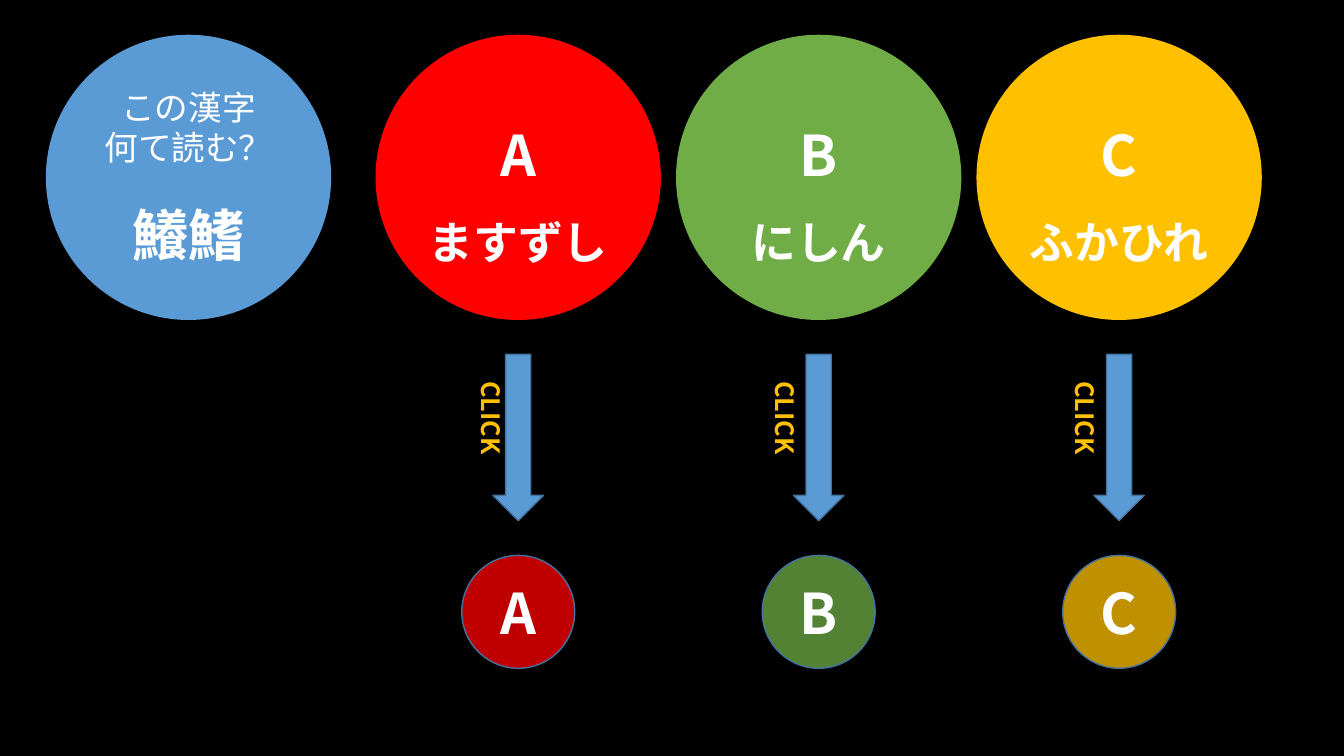
import dataclasses

import pptx
import pptx.dml.color
import pptx.enum.shapes
import pptx.enum.text
import pptx.oxml.ns
import pptx.shapes.autoshape
import pptx.slide
import pptx.text.text
import pptx.util
from lxml import etree

FONT = "Noto Sans CJK JP"
WHITE = "FFFFFF"
BLUE = "5B9BD5"
BLUE_EDGE = "43739E"
AMBER = "FFC000"

SLIDE_WIDTH, SLIDE_HEIGHT = 13.33, 7.5
# Centres of the columns and middles of the rows, in inches
QUESTION_CENTRE = 1.87
FIRST_OPTION_CENTRE = 5.14
OPTION_STEP = 2.98
CHOICE_ROW, CLICK_ROW, ARROW_ROW, ANSWER_ROW = 1.76, 4.22, 4.34, 6.07
CHOICE_SIZE = (2.83, 2.83)
ANSWER_SIZE = (1.12, 1.12)
ARROW_SIZE = (0.5, 1.65)
CLICK_SIZE = (0.5, 1.07)

CIRCLE = pptx.enum.shapes.MSO_SHAPE.FLOWCHART_CONNECTOR
DOWN_ARROW = pptx.enum.shapes.MSO_SHAPE.DOWN_ARROW
CENTRED = pptx.enum.text.PP_ALIGN.CENTER


@dataclasses.dataclass(frozen=True)
class Line:
    text: str
    size: int
    bold: bool = True
    spacing: float = 1.0


@dataclasses.dataclass(frozen=True)
class Option:
    letter: str
    reading: str
    color: str
    answer_color: str
    click_shift: float


QUESTION = [
    Line("この漢字", 24, bold=False),
    Line("何て読む？", 24, bold=False),
    Line("鱶鰭", 40, spacing=1.5),
]
OPTIONS = [
    Option("A", "ますずし", "FF0000", "C00000", -0.31),
    Option("B", "にしん", "70AD47", "548235", -0.38),
    Option("C", "ふかひれ", AMBER, "BF9000", -0.38),
]


def rgb(color: str) -> pptx.dml.color.RGBColor:
    return pptx.dml.color.RGBColor.from_string(color)


def centred_box(
    centre: float, middle: float, size: tuple[float, float]
) -> list[pptx.util.Length]:
    """Return left, top, width and height of a box around a point."""
    width, height = size
    return [
        pptx.util.Inches(length)
        for length in (centre - width / 2, middle - height / 2, width, height)
    ]


def write_lines(
    text_frame: pptx.text.text.TextFrame,
    lines: list[Line],
    color: str,
    alignment: pptx.enum.text.PP_ALIGN,
) -> None:
    text_frame.text = "\n".join(line.text for line in lines)
    for paragraph, line in zip(text_frame.paragraphs, lines):
        paragraph.alignment = alignment
        paragraph.line_spacing = line.spacing
        for run in paragraph.runs:
            run.font.size = pptx.util.Pt(line.size)
            run.font.bold = line.bold
            run.font.color.rgb = rgb(color)
            run.font.name = FONT
            east_asian = etree.SubElement(
                run.font._element, pptx.oxml.ns.qn("a:ea")
            )
            east_asian.set("typeface", FONT)


def add_figure(
    slide: pptx.slide.Slide,
    preset: pptx.enum.shapes.MSO_SHAPE,
    box: list[pptx.util.Length],
    color: str,
    edge: str | None = None,
) -> pptx.shapes.autoshape.Shape:
    shape = slide.shapes.add_shape(preset, *box)
    shape.shadow.inherit = False
    shape.fill.solid()
    shape.fill.fore_color.rgb = rgb(color)
    if edge is None:
        shape.line.fill.background()
    else:
        shape.line.color.rgb = rgb(edge)
        shape.line.width = pptx.util.Pt(1)
    return shape


def add_circle(
    slide: pptx.slide.Slide,
    box: list[pptx.util.Length],
    color: str,
    lines: list[Line],
    edge: str | None = None,
) -> None:
    circle = add_figure(slide, CIRCLE, box, color, edge)
    circle.text_frame.vertical_anchor = pptx.enum.text.MSO_ANCHOR.MIDDLE
    write_lines(circle.text_frame, lines, WHITE, CENTRED)


def add_click_label(
    slide: pptx.slide.Slide, box: list[pptx.util.Length]
) -> None:
    """Add the word that runs downwards beside an arrow."""
    text_frame = slide.shapes.add_textbox(*box).text_frame
    text_frame.word_wrap = True
    text_frame.auto_size = pptx.enum.text.MSO_AUTO_SIZE.SHAPE_TO_FIT_TEXT
    text_frame._txBody.bodyPr.set("vert", "eaVert")
    write_lines(
        text_frame, [Line("CLICK", 18)], AMBER, pptx.enum.text.PP_ALIGN.JUSTIFY
    )


def add_option(
    slide: pptx.slide.Slide, option: Option, centre: float
) -> None:
    choice_lines = [
        Line(option.letter, 40, spacing=1.5),
        Line(option.reading, 32, spacing=1.5),
    ]
    choice_box = centred_box(centre, CHOICE_ROW, CHOICE_SIZE)
    add_circle(slide, choice_box, option.color, choice_lines)

    arrow_box = centred_box(centre, ARROW_ROW, ARROW_SIZE)
    add_figure(slide, DOWN_ARROW, arrow_box, BLUE, BLUE_EDGE)

    answer_box = centred_box(centre, ANSWER_ROW, ANSWER_SIZE)
    answer_lines = [Line(option.letter, 40)]
    add_circle(slide, answer_box, option.answer_color, answer_lines, BLUE_EDGE)

    click_centre = centre + option.click_shift
    add_click_label(slide, centred_box(click_centre, CLICK_ROW, CLICK_SIZE))


def main() -> None:
    presentation = pptx.Presentation()
    presentation.slide_width = pptx.util.Inches(SLIDE_WIDTH)
    presentation.slide_height = pptx.util.Inches(SLIDE_HEIGHT)
    blank_layout = presentation.slide_layouts[6]
    slide = presentation.slides.add_slide(blank_layout)
    slide.background.fill.solid()
    slide.background.fill.fore_color.rgb = rgb("000000")

    question_box = centred_box(QUESTION_CENTRE, CHOICE_ROW, CHOICE_SIZE)
    add_circle(slide, question_box, BLUE, QUESTION)
    for column, option in enumerate(OPTIONS):
        add_option(slide, option, FIRST_OPTION_CENTRE + column * OPTION_STEP)

    presentation.save("out.pptx")


if __name__ == "__main__":
    main()
